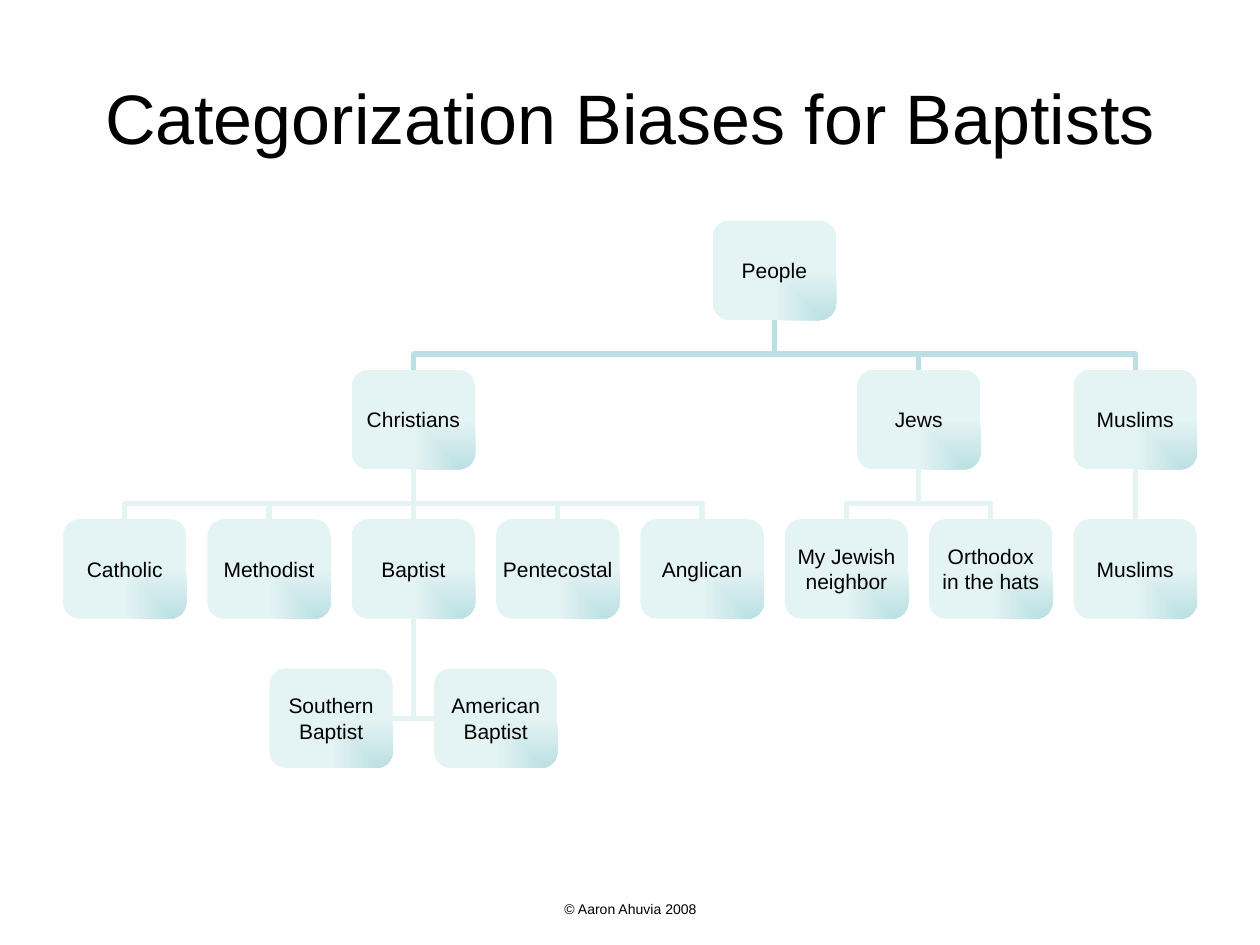
from dataclasses import dataclass

from pptx import Presentation
from pptx.dml.color import RGBColor
from pptx.enum.shapes import MSO_CONNECTOR, MSO_SHAPE
from pptx.enum.text import MSO_ANCHOR, PP_ALIGN
from pptx.oxml import parse_xml
from pptx.oxml.ns import nsdecls, qn
from pptx.slide import Slide
from pptx.text.text import TextFrame
from pptx.util import Inches, Pt
from lxml.etree import SubElement

SLIDE_WIDTH, SLIDE_HEIGHT = 10, 7.5
FONT = "Arial"
BLACK, TEAL, PALE = "000000", "BBE0E3", "E4F3F4"

COLUMNS = 8
LEFT, TOP = 0.05 * SLIDE_WIDTH, 1.75
BOX_WIDTH, BOX_HEIGHT = 0.98, 0.79
COLUMN_STEP = (SLIDE_WIDTH - 2 * LEFT - BOX_WIDTH) / (COLUMNS - 1)
ROW_STEP = 1.5 * BOX_HEIGHT
BEND = 0.32


@dataclass(frozen=True)
class Node:
    text: str
    column: float
    row: int
    children: tuple["Node", ...] = ()
    branch_color: str = PALE
    hanging: bool = False

    @property
    def left(self) -> float:
        return LEFT + self.column * COLUMN_STEP

    @property
    def top(self) -> float:
        return TOP + self.row * ROW_STEP

    @property
    def center(self) -> float:
        return self.left + BOX_WIDTH / 2

    @property
    def middle(self) -> float:
        return self.top + BOX_HEIGHT / 2

    @property
    def bottom(self) -> float:
        return self.top + BOX_HEIGHT


BAPTIST = Node("Baptist", 2, 2, (
    Node("Southern\nBaptist", 1.43, 3),
    Node("American\nBaptist", 2.57, 3),
), hanging=True)

PEOPLE = Node("People", 4.5, 0, (
    Node("Christians", 2, 1, (
        Node("Catholic", 0, 2),
        Node("Methodist", 1, 2),
        BAPTIST,
        Node("Pentecostal", 3, 2),
        Node("Anglican", 4, 2),
    )),
    Node("Jews", 5.5, 1, (
        Node("My Jewish\nneighbor", 5, 2),
        Node("Orthodox\nin the hats", 6, 2),
    )),
    Node("Muslims", 7, 1, (Node("Muslims", 7, 2),)),
), branch_color=TEAL)


def rgb(color: str) -> RGBColor:
    return RGBColor.from_string(color)


def write(frame: TextFrame, text: str, size: float) -> None:
    frame.text = text
    for paragraph in frame.paragraphs:
        paragraph.alignment = PP_ALIGN.CENTER
        paragraph.font.name = FONT
        paragraph.font.size = Pt(size)
        paragraph.font.color.rgb = rgb(BLACK)


def add_label(page: Slide, text: str, size: float, left: float, top: float,
              width: float, height: float, anchor: MSO_ANCHOR) -> None:
    box = page.shapes.add_textbox(Inches(left), Inches(top), Inches(width), Inches(height))
    box.text_frame.word_wrap = True
    box.text_frame.vertical_anchor = anchor
    write(box.text_frame, text, size)


def corner_gradient(start: str, end: str):
    stops = "".join(
        f'<a:gs pos="{position}"><a:srgbClr val="{color}"/></a:gs>'
        for position, color in ((0, start), (100000, end))
    )
    return parse_xml(
        f'<a:gradFill {nsdecls("a")} rotWithShape="1"><a:gsLst>{stops}</a:gsLst>'
        '<a:path path="rect"><a:fillToRect l="100000" t="100000"/></a:path></a:gradFill>'
    )


def add_box(page: Slide, node: Node) -> None:
    box = page.shapes.add_shape(
        MSO_SHAPE.ROUNDED_RECTANGLE,
        Inches(node.left), Inches(node.top), Inches(BOX_WIDTH), Inches(BOX_HEIGHT),
    )
    box.shadow.inherit = False
    box.line.fill.background()
    box._element.spPr.find(qn("a:prstGeom")).addnext(corner_gradient(TEAL, PALE))
    frame = box.text_frame
    frame.word_wrap = False
    frame.vertical_anchor = MSO_ANCHOR.MIDDLE
    frame.margin_left = frame.margin_right = frame.margin_top = frame.margin_bottom = 0
    write(frame, node.text, 12)


def add_branch(page: Slide, parent: Node, child: Node) -> None:
    rightward = child.center >= parent.center
    if parent.hanging:
        start_x = child.left if rightward else child.left + BOX_WIDTH
        start_y = child.middle
    else:
        start_x, start_y = child.center, child.top
    across, down = abs(start_x - parent.center), start_y - parent.bottom
    width, height = (across, down) if parent.hanging else (down, across)
    left = (start_x + parent.center - width) / 2
    top = (start_y + parent.bottom - height) / 2

    branch = page.shapes.add_connector(
        MSO_CONNECTOR.ELBOW,
        Inches(left), Inches(top), Inches(left + width), Inches(top + height),
    )
    branch.line.color.rgb = rgb(parent.branch_color)
    branch.line.width = Pt(3)
    properties = branch._element.spPr
    SubElement(properties, qn("a:effectLst"))
    geometry = properties.find(qn("a:prstGeom"))
    if parent.hanging:
        geometry.set("prst", "bentConnector2")
        turn, flipped = 180, not rightward
    else:
        guide = SubElement(geometry.find(qn("a:avLst")), qn("a:gd"))
        guide.set("name", "adj1")
        guide.set("fmla", f"val {round(BEND * 100000)}")
        turn, flipped = (90, True) if rightward else (270, False)
    if parent.hanging:
        flipped = not rightward
    frame = properties.find(qn("a:xfrm"))
    frame.set("rot", str(turn * 60000))
    frame.set("flipH", str(int(flipped)))


def add_branches(page: Slide, parent: Node) -> None:
    for child in parent.children:
        add_branches(page, child)
        add_branch(page, parent, child)


def add_boxes(page: Slide, node: Node) -> None:
    add_box(page, node)
    for child in node.children:
        add_boxes(page, child)


def main() -> None:
    deck = Presentation()
    deck.slide_width, deck.slide_height = Inches(SLIDE_WIDTH), Inches(SLIDE_HEIGHT)
    page = deck.slides.add_slide(deck.slide_layouts[6])
    add_label(page, "Categorization Biases for Baptists", 40,
              LEFT, 0.04 * SLIDE_HEIGHT, 0.9 * SLIDE_WIDTH, 1.25, MSO_ANCHOR.MIDDLE)
    add_label(page, "© Aaron Ahuvia 2008", 8, 3.42, 7.1, 3.17, 0.25, MSO_ANCHOR.TOP)
    add_branches(page, PEOPLE)
    add_boxes(page, PEOPLE)
    deck.save("out.pptx")


if __name__ == "__main__":
    main()
